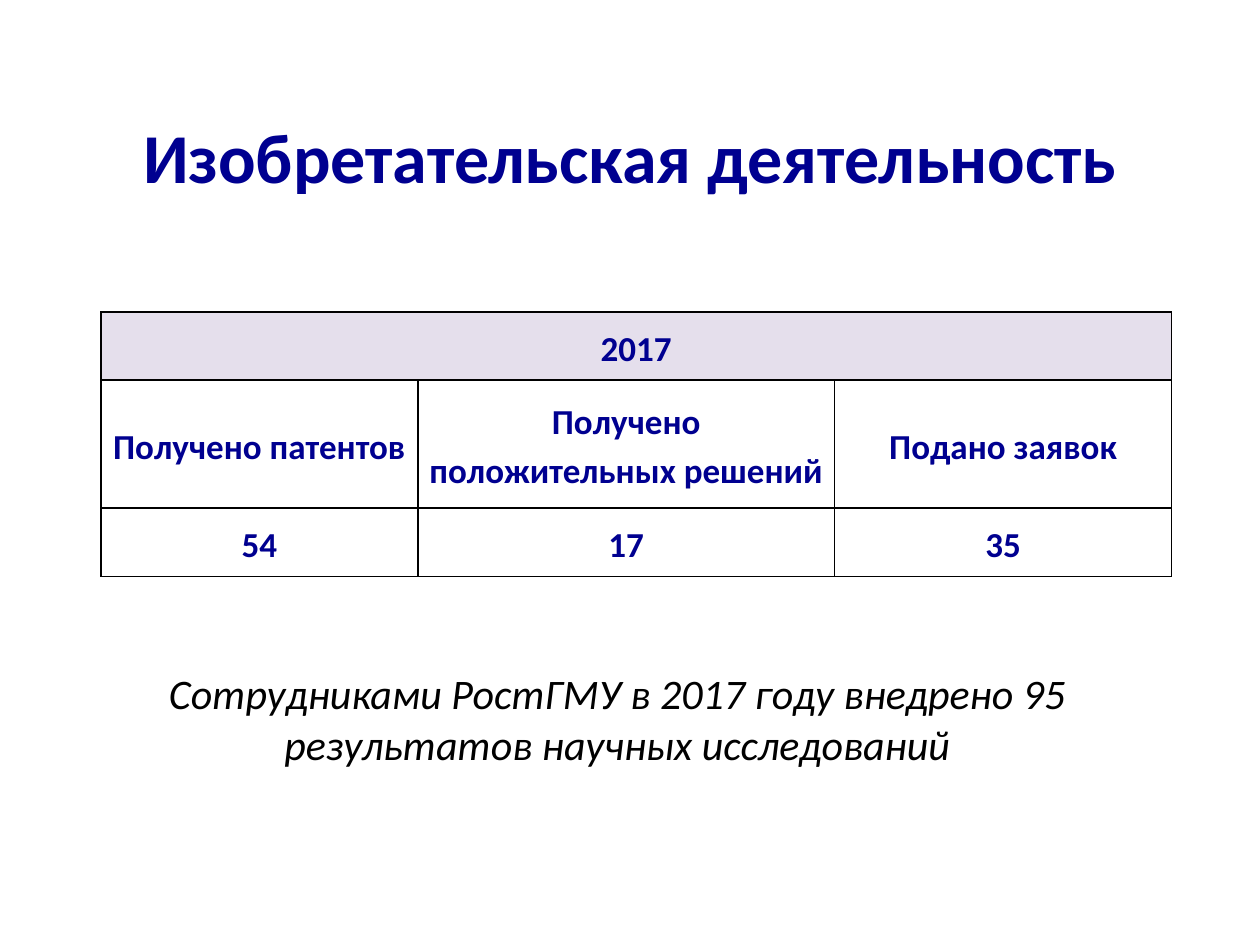
from lxml import etree
from pptx import Presentation
from pptx import util as u
from pptx.dml.color import RGBColor
from pptx.enum import text
from pptx.oxml.ns import qn

NAVY = RGBColor(0x00, 0x00, 0x90)
BLACK = RGBColor(0x00, 0x00, 0x00)
LILAC = RGBColor(0xE5, 0xDF, 0xEC)

TITLE = dict(size=u.Pt(40), bold=True)
NOTE = dict(size=u.Pt(24), italic=True)
CELL = dict(size=u.Pt(20), bold=True)


def assign(obj, vals):
    for key, val in vals.items():
        setattr(obj, key, val)


class Deck:
    """Holds the style and the current slide; places are shares of its size."""
    font = "Calibri"

    def __init__(self, wide, high):
        self.prs = Presentation()
        self.prs.slide_width, self.prs.slide_height = u.Inches(wide), u.Inches(high)
        self.slide = self.prs.slides.add_slide(self.prs.slide_layouts[6])

    def place(self, x, y, w, h):
        wide, high = self.prs.slide_width, self.prs.slide_height
        return [round(v) for v in (x * wide, y * high, w * wide, h * high)]

    def phrase(self, frame, words, style, color, **para):
        p = frame.paragraphs[0]
        assign(p, dict(alignment=text.PP_ALIGN.CENTER, **para))
        run = p.add_run()
        run.text = words
        assign(run.font, dict(name=self.font, **style))
        run.font.color.rgb = color

    def label(self, box, words, style, color, anchor):
        frame = self.slide.shapes.add_textbox(*self.place(*box)).text_frame
        assign(frame, dict(word_wrap=True, vertical_anchor=anchor))
        self.phrase(frame, words, style, color)

    def border(self, cell, color, width):
        props = cell._tc.get_or_add_tcPr()
        for i, side in enumerate(("lnL", "lnR", "lnT", "lnB")):
            line = etree.Element(qn("a:" + side), w=str(u.Pt(width)))
            fill = etree.SubElement(line, qn("a:solidFill"))
            etree.SubElement(fill, qn("a:srgbClr"), val=str(color))
            props.insert(i, line)

    def table(self, box, cols, rows, data):
        """Column and row sizes are relative weights."""
        x, y, w, h = self.place(*box)
        grid = self.slide.shapes.add_table(len(rows), len(cols), x, y, w, h).table
        for col, part in zip(grid.columns, cols):
            col.width = round(w * part / sum(cols))
        for row, part in zip(grid.rows, rows):
            row.height = round(h * part / sum(rows))
        for r, line in enumerate(data):
            for c in range(len(cols)):
                cell = grid.cell(r, c)
                assign(cell, dict(margin_left=u.Inches(0.07), margin_right=u.Inches(0.07),
                                  margin_top=0, margin_bottom=0,
                                  vertical_anchor=text.MSO_ANCHOR.MIDDLE))
                if r == 0:
                    cell.fill.solid()
                    cell.fill.fore_color.rgb = LILAC
                else:
                    cell.fill.background()
                self.border(cell, BLACK, 1)
                if c < len(line):
                    self.phrase(cell.text_frame, line[c], CELL, NAVY,
                                line_spacing=1.15, space_after=u.Pt(10))
        # The year spans the whole head row
        grid.cell(0, 0).merge(grid.cell(0, len(cols) - 1))


def main():
    deck = Deck(10, 7.5)

    # Heading
    deck.label((0.05, 0.08, 0.9, 0.17), "Изобретательская деятельность",
               TITLE, NAVY, text.MSO_ANCHOR.MIDDLE)

    # Closing statement
    deck.label((0.03, 0.7, 0.92, 0.12),
               "Сотрудниками РостГМУ в 2017 году внедрено 95 результатов научных исследований",
               NOTE, BLACK, text.MSO_ANCHOR.TOP)

    # Patent figures
    deck.table((0.08, 0.33, 0.85, 0.28), (2.52, 3.31, 2.68), (0.55, 1.03, 0.55), [
        ["2017"],
        ["Получено патентов", "Получено положительных решений", "Подано заявок"],
        ["54", "17", "35"],
    ])

    deck.prs.save("out.pptx")


if __name__ == "__main__":
    main()
